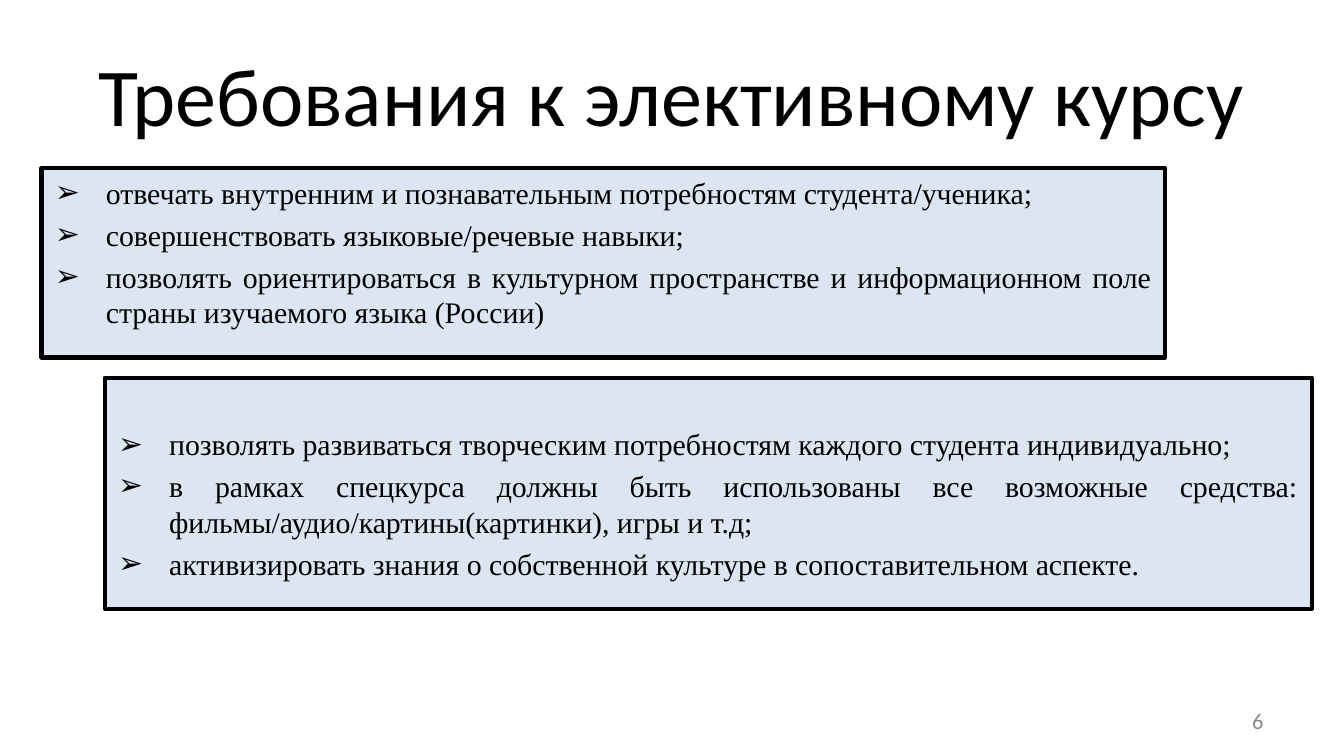
from pptx import Presentation
from pptx import util as u
from pptx.dml.color import RGBColor
from pptx.enum import shapes, text
from pptx.oxml.ns import qn
from lxml import etree

BLACK = RGBColor(0, 0, 0)
GRAY = RGBColor(0x8C, 0x8C, 0x8C)
PALE = RGBColor(0xDC, 0xE6, 0xF2)
WIDTH = 10
HEIGHT = WIDTH * 9 / 16
HANG = 0.38

TITLE = "Требования к элективному курсу"
PAGE = "6"
PANELS = [
    ((0.31, 1.25, 8.36, 1.41), 0.05, [
        "отвечать внутренним и познавательным потребностям студента/ученика;",
        "совершенствовать языковые/речевые навыки;",
        "позволять ориентироваться в культурном пространстве и информационном поле "
        "страны изучаемого языка (России)",
    ]),
    ((0.78, 2.81, 8.98, 1.72), 0.36, [
        "позволять развиваться творческим потребностям каждого студента индивидуально;",
        "в рамках спецкурса должны быть использованы все возможные средства: "
        "фильмы/аудио/картины(картинки), игры и т.д;",
        "активизировать знания о собственной культуре в сопоставительном аспекте.",
    ]),
]


def write(para, words, size, face, color, align):
    para.alignment = align
    run = para.add_run()
    run.text = words
    run.font.size = u.Pt(size)
    run.font.name = face
    run.font.color.rgb = color


def bullet(para):
    props = para._p.get_or_add_pPr()
    props.set("marL", str(u.Inches(HANG)))
    props.set("indent", str(-u.Inches(HANG)))
    etree.SubElement(props, qn("a:buFont")).set("typeface", "Arial")
    etree.SubElement(props, qn("a:buChar")).set("char", "➢")


def panel(slide, box, top, items):
    rect = slide.shapes.add_shape(shapes.MSO_SHAPE.RECTANGLE, *map(u.Inches, box))
    rect.shadow.inherit = False
    rect.fill.solid()
    rect.fill.fore_color.rgb = PALE
    rect.line.color.rgb = BLACK
    rect.line.width = u.Pt(2.25)
    frame = rect.text_frame
    frame.word_wrap = True
    frame.vertical_anchor = text.MSO_ANCHOR.TOP
    frame.margin_top = u.Inches(top)
    for i, item in enumerate(items):
        para = frame.add_paragraph() if i else frame.paragraphs[0]
        bullet(para)
        if i:
            para.space_before = u.Pt(3.2)
        write(para, item, 16, "Times New Roman", BLACK, text.PP_ALIGN.JUSTIFY)


def main():
    deck = Presentation()
    deck.slide_width, deck.slide_height = u.Inches(WIDTH), u.Inches(HEIGHT)
    slide = deck.slides.add_slide(deck.slide_layouts.get_by_name("Title Only"))

    title = slide.shapes.title
    title.left, title.top, title.width, title.height = map(u.Inches, (0.5, 0.23, 9, 0.94))
    title.text_frame.vertical_anchor = text.MSO_ANCHOR.MIDDLE
    write(title.text_frame.paragraphs[0], TITLE, 44, "Calibri", BLACK, text.PP_ALIGN.CENTER)

    for box, top, items in PANELS:
        panel(slide, box, top, items)

    page = slide.shapes.add_textbox(*map(u.Inches, (7.17, 5.21, 2.33, 0.3))).text_frame
    page.word_wrap = True
    page.vertical_anchor = text.MSO_ANCHOR.MIDDLE
    write(page.paragraphs[0], PAGE, 12, "Calibri", GRAY, text.PP_ALIGN.RIGHT)

    deck.save("out.pptx")


if __name__ == "__main__":
    main()
